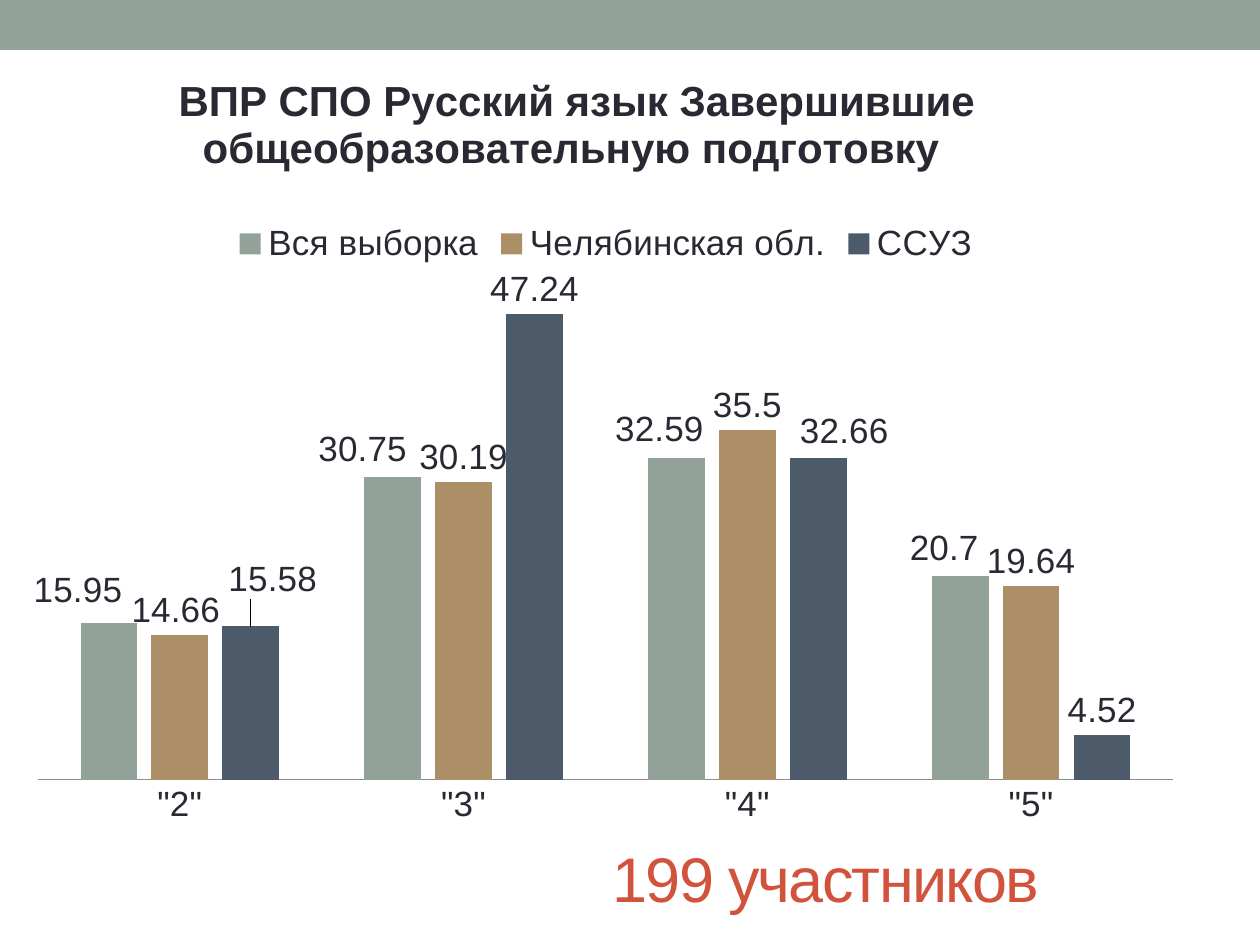
"""Build the slide with Russian language test results as a clustered column chart."""
import lxml.etree
import pptx
import pptx.chart.data
import pptx.dml.color
import pptx.enum.chart
import pptx.enum.shapes
import pptx.enum.text
import pptx.oxml
import pptx.oxml.ns
import pptx.util

EMU_PER_PX = 914400 / 126
THEME = {
    "font": "Arial", "text": "292934", "accent": "D2533C", "band": "93A299", "axis": "8C8C8C",
    "series": ["93A299", "AD8F67", "4C5A6A"],
    "title_size": 36, "chart_title_size": 24, "chart_size": 20,
}
CATEGORIES = ['"2"', '"3"', '"4"', '"5"']
RESULTS = {
    "Вся выборка": [15.95, 30.75, 32.59, 20.7],
    "Челябинская обл.": [14.66, 30.19, 35.5, 19.64],
    "ССУЗ": [15.58, 47.24, 32.66, 4.52],
}
LABEL_SHIFTS = {
    "Вся выборка": {0: (-31, -7), 1: (-30, -2), 2: (-17, -4), 3: (-16, -2)},
    "Челябинская обл.": {0: (-4, 0)},
    "ССУЗ": {0: (22, -22), 2: (26, -2)},
}
CHART_BOX = (15, 66, 1182, 774)
PLOT_BOX = (23, 221, 1135, 493)
CHART_TITLE_CORNER = (156, 0)
NO_LEADER_LINES = (
    '<c:extLst xmlns:c="http://schemas.openxmlformats.org/drawingml/2006/chart">'
    '<c:ext uri="{CE6537A1-D6FC-4f65-9D91-7224C49458BB}" '
    'xmlns:c15="http://schemas.microsoft.com/office/drawing/2012/chart">'
    '<c15:showLeaderLines val="0"/></c:ext></c:extLst>')


def format_font(font, size, color, bold=False):
    values = {"name": THEME["font"], "size": pptx.util.Pt(size), "bold": bold}
    for name, value in values.items():
        setattr(font, name, value)
    font.color.rgb = pptx.dml.color.RGBColor.from_string(color)


def add_layout(parent, position, lengths, modes):
    layout = lxml.etree.Element(pptx.oxml.ns.qn("c:layout"))
    manual = lxml.etree.SubElement(layout, pptx.oxml.ns.qn("c:manualLayout"))
    fractions = [round(px / CHART_BOX[2 + index % 2], 4) for index, px in enumerate(lengths)]
    for name, value in {**modes, **dict(zip("xywh", fractions))}.items():
        lxml.etree.SubElement(manual, pptx.oxml.ns.qn(f"c:{name}")).set("val", str(value))
    for existing in parent.findall(pptx.oxml.ns.qn("c:layout")):
        parent.remove(existing)
    parent.insert(position, layout)


presentation = pptx.Presentation()
presentation.slide_width = pptx.util.Inches(10)
presentation.slide_height = pptx.util.Inches(7.5)
slide = presentation.slides.add_slide(presentation.slide_layouts[5])

band = slide.shapes.add_shape(
    pptx.enum.shapes.MSO_SHAPE.RECTANGLE, *[int(px * EMU_PER_PX) for px in (0, 0, 1260, 50)])
band.shadow.inherit = False
band.fill.solid()
band.fill.fore_color.rgb = pptx.dml.color.RGBColor.from_string(THEME["band"])
band.line.fill.background()

title = slide.shapes.title
for name, px in {"left": 600, "top": 829, "width": 1134, "height": 96}.items():
    setattr(title, name, int(px * EMU_PER_PX))
title.text_frame.text = "199 участников"
title.text_frame.vertical_anchor = pptx.enum.text.MSO_ANCHOR.MIDDLE
paragraph = title.text_frame.paragraphs[0]
paragraph.alignment = pptx.enum.text.PP_ALIGN.LEFT
format_font(paragraph.runs[0].font, THEME["title_size"], THEME["accent"])
paragraph.runs[0].font._element.set("spc", "-100")

chart_data = pptx.chart.data.CategoryChartData()
chart_data.categories = CATEGORIES
for name, values in RESULTS.items():
    chart_data.add_series(name, values)
chart = slide.shapes.add_chart(
    pptx.enum.chart.XL_CHART_TYPE.COLUMN_CLUSTERED,
    *[int(px * EMU_PER_PX) for px in CHART_BOX], chart_data).chart
format_font(chart.font, THEME["chart_size"], THEME["text"])

edge_modes = {"xMode": "edge", "yMode": "edge"}
chart.has_title = True
chart.chart_title.include_in_layout = False
chart.chart_title.text_frame.text = "ВПР СПО Русский язык Завершившие общеобразовательную подготовку "
chart_title_run = chart.chart_title.text_frame.paragraphs[0].runs[0]
format_font(chart_title_run.font, THEME["chart_title_size"], THEME["text"], bold=True)
add_layout(chart.chart_title._element, 1, CHART_TITLE_CORNER, edge_modes)
chart.has_legend = True
chart.legend.position = pptx.enum.chart.XL_LEGEND_POSITION.TOP
chart.legend.include_in_layout = False

value_axis_format = {
    "visible": False, "has_major_gridlines": False, "minimum_scale": 0, "maximum_scale": 50}
for name, value in value_axis_format.items():
    setattr(chart.value_axis, name, value)
chart.category_axis.major_tick_mark = pptx.enum.chart.XL_TICK_MARK.NONE
chart.category_axis.format.line.width = pptx.util.Pt(0.75)
chart.category_axis.format.line.color.rgb = pptx.dml.color.RGBColor.from_string(THEME["axis"])

plot = chart.plots[0]
for name, value in {"gap_width": 150, "overlap": -25, "vary_by_categories": False}.items():
    setattr(plot, name, value)
add_layout(plot._element.getparent(), 0, PLOT_BOX, {"layoutTarget": "inner", **edge_modes})

outside_end = pptx.enum.chart.XL_LABEL_POSITION.OUTSIDE_END
for series, color in zip(plot.series, THEME["series"]):
    series.format.fill.solid()
    series.format.fill.fore_color.rgb = pptx.dml.color.RGBColor.from_string(color)
    series.data_labels.show_value = True
    series.data_labels.position = outside_end
    format_font(series.data_labels.font, THEME["chart_size"], THEME["text"])
    for index, shift in LABEL_SHIFTS[series.name].items():
        label = series.points[index].data_label
        label.position = outside_end
        format_font(label.font, THEME["chart_size"], THEME["text"])
        label_element = series._element.xpath(f"c:dLbls/c:dLbl[c:idx/@val='{index}']")[0]
        add_layout(label_element, 1, shift, {})
    series.data_labels._element.append(pptx.oxml.parse_xml(NO_LEADER_LINES))

presentation.save("out.pptx")
